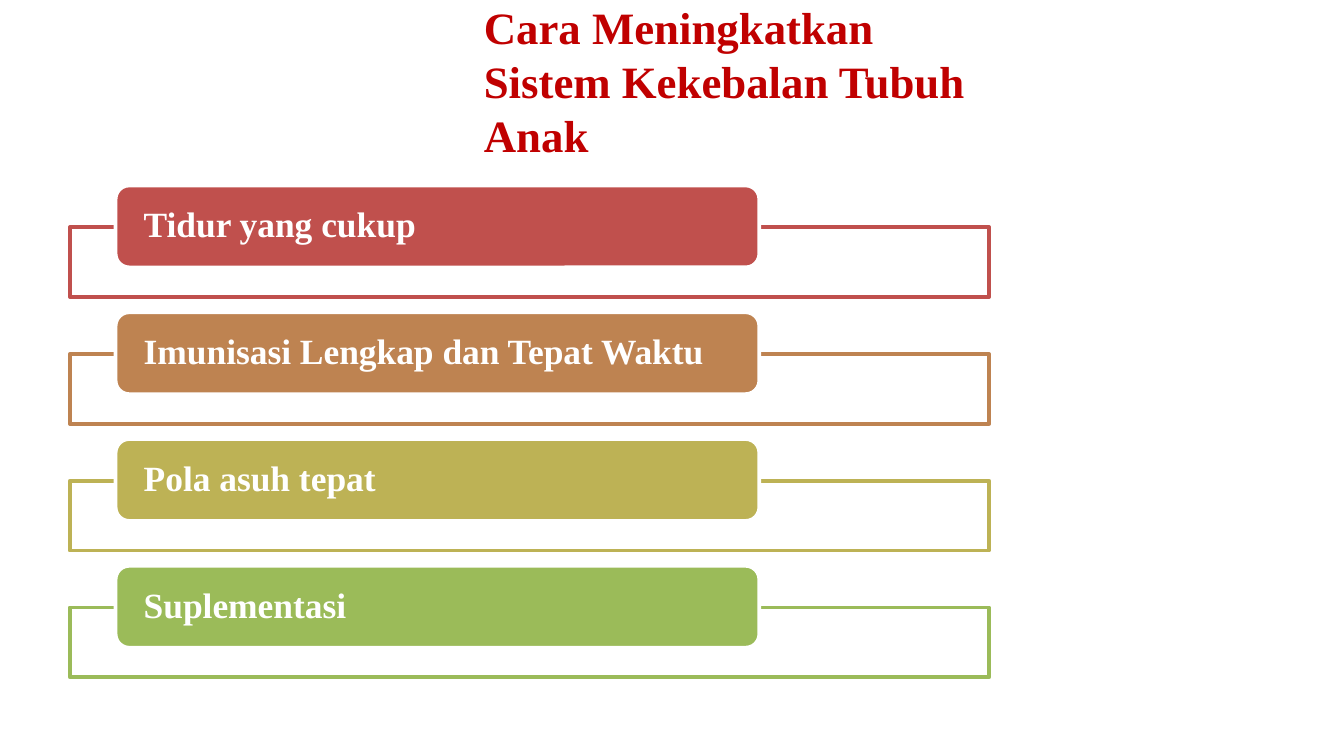
from pptx import Presentation
from pptx.dml.color import RGBColor
from pptx.enum.shapes import MSO_SHAPE
from pptx.enum.text import MSO_ANCHOR, MSO_AUTO_SIZE, PP_ALIGN
from pptx.util import Inches, Pt

# Content: label and colour of each row
TITLE = "Cara Meningkatkan Sistem Kekebalan Tubuh Anak"
ROWS = [
    ("Tidur yang cukup", "C0504D"),
    ("Imunisasi Lengkap dan Tepat Waktu", "BE8351"),
    ("Pola asuh tepat", "BDB255"),
    ("Suplementasi", "9BBB59"),
]

THEME = {
    "font": "Times New Roman",
    "title": "C00000",
    "white": "FFFFFF",
    "title_size": 24,
    "label_size": 19,
    "line": 2,
}

# Layout in inches
FIRST_TOP, LAST_TOP = 1.38, 4.21
PITCH = (LAST_TOP - FIRST_TOP) / (len(ROWS) - 1)
FRAME_DROP = 0.31


def rgb(name):
    return RGBColor.from_string(name)


def set_font(p, size, color):
    p.font.name = THEME["font"]
    p.font.size = Pt(size)
    p.font.bold = True
    p.font.color.rgb = rgb(color)
    p.alignment = PP_ALIGN.LEFT


def add_box(s, kind, left, top, width, height, fill, line):
    sp = s.shapes.add_shape(kind, Inches(left), Inches(top), Inches(width), Inches(height))
    sp.shadow.inherit = False
    sp.fill.solid()
    sp.fill.fore_color.rgb = rgb(fill)
    sp.line.color.rgb = rgb(line)
    sp.line.width = Pt(THEME["line"])
    return sp


# Widescreen slide, 16:9
prs = Presentation()
prs.slide_width = Inches(10)
prs.slide_height = Inches(10) * 9 // 16
s = prs.slides.add_slide(prs.slide_layouts[5])

# Title, lifted by a deeper bottom margin
title = s.shapes.title
title.left, title.top = Inches(3.5), Inches(0.31)
title.width, title.height = Inches(3.86), Inches(0.94)
tf = title.text_frame
tf.text = TITLE
tf.word_wrap = True
tf.auto_size = MSO_AUTO_SIZE.NONE
tf.vertical_anchor = MSO_ANCHOR.MIDDLE
tf.margin_bottom = Inches(0.41)
set_font(tf.paragraphs[0], THEME["title_size"], THEME["title"])

# Rows: an outlined frame with a label over its top edge
for i, (label, color) in enumerate(ROWS):
    top = FIRST_TOP + i * PITCH
    add_box(s, MSO_SHAPE.RECTANGLE, 0.52, top + FRAME_DROP, 6.84, 0.52, THEME["white"], color)
    sp = add_box(s, MSO_SHAPE.ROUNDED_RECTANGLE, 0.86, top, 4.79, 0.61, color, THEME["white"])
    tf = sp.text_frame
    tf.text = label
    tf.word_wrap = True
    tf.vertical_anchor = MSO_ANCHOR.MIDDLE
    tf.margin_left = tf.margin_right = Inches(0.18)
    tf.margin_top = tf.margin_bottom = 0
    p = tf.paragraphs[0]
    p.line_spacing = 0.9
    set_font(p, THEME["label_size"], THEME["white"])

prs.save("out.pptx")
